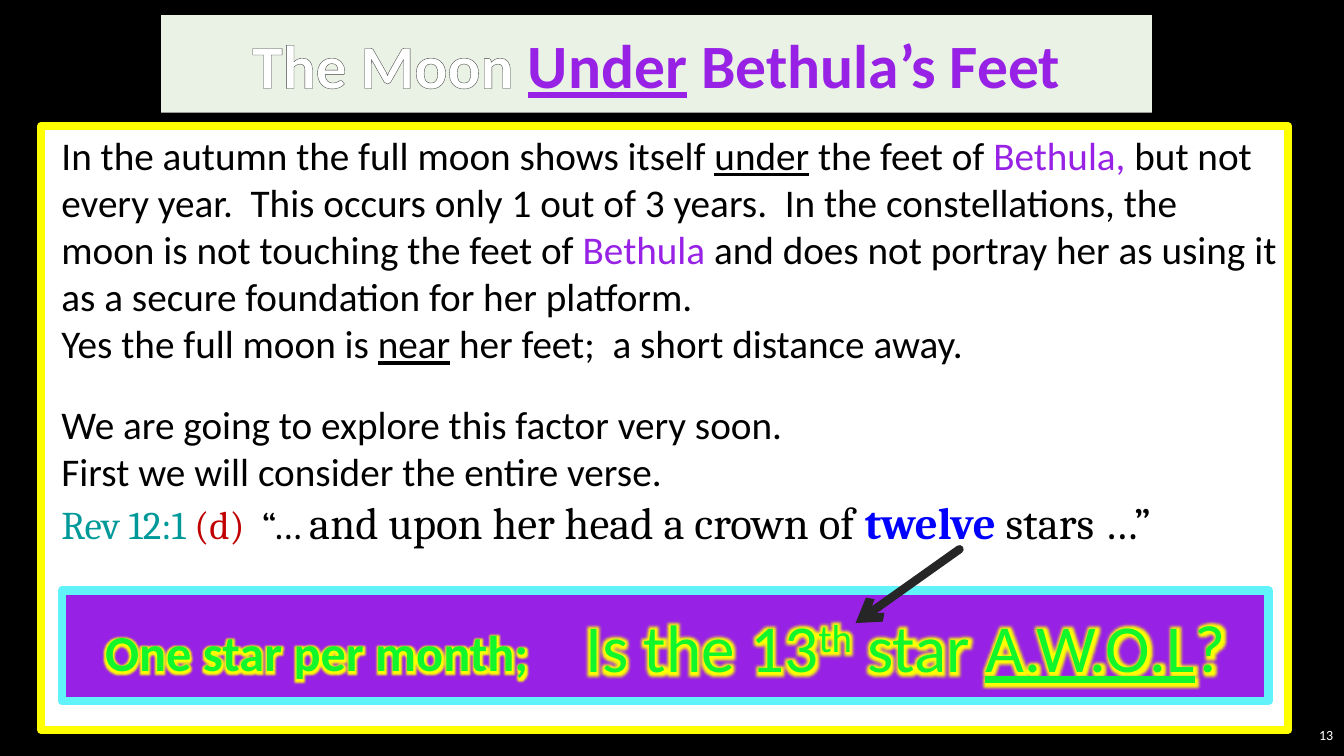
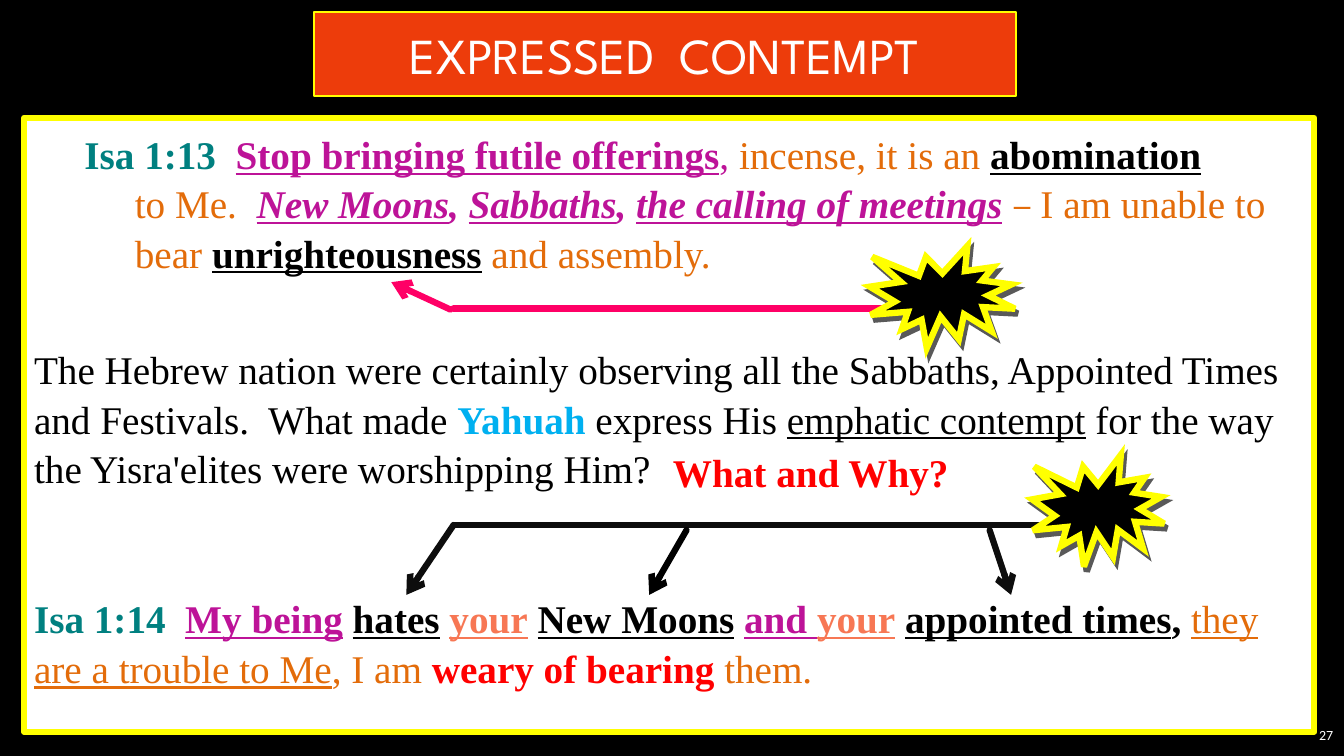
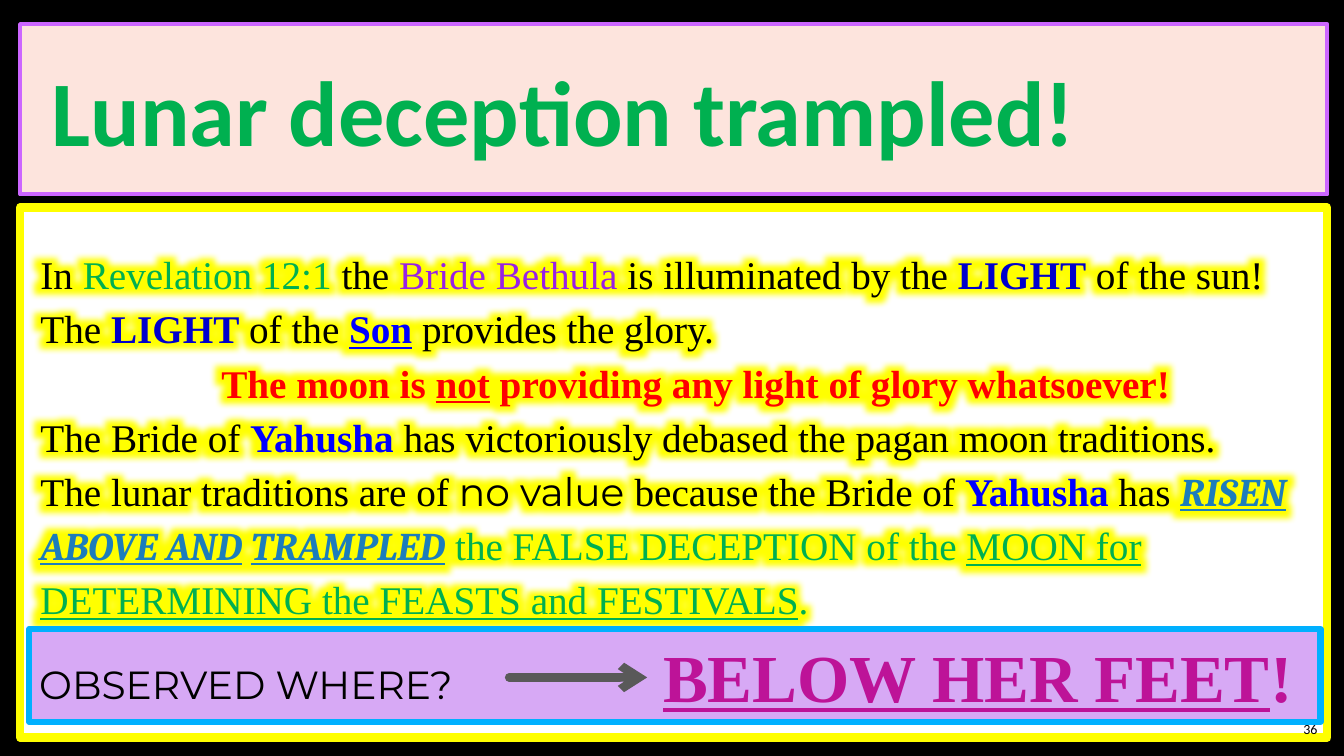
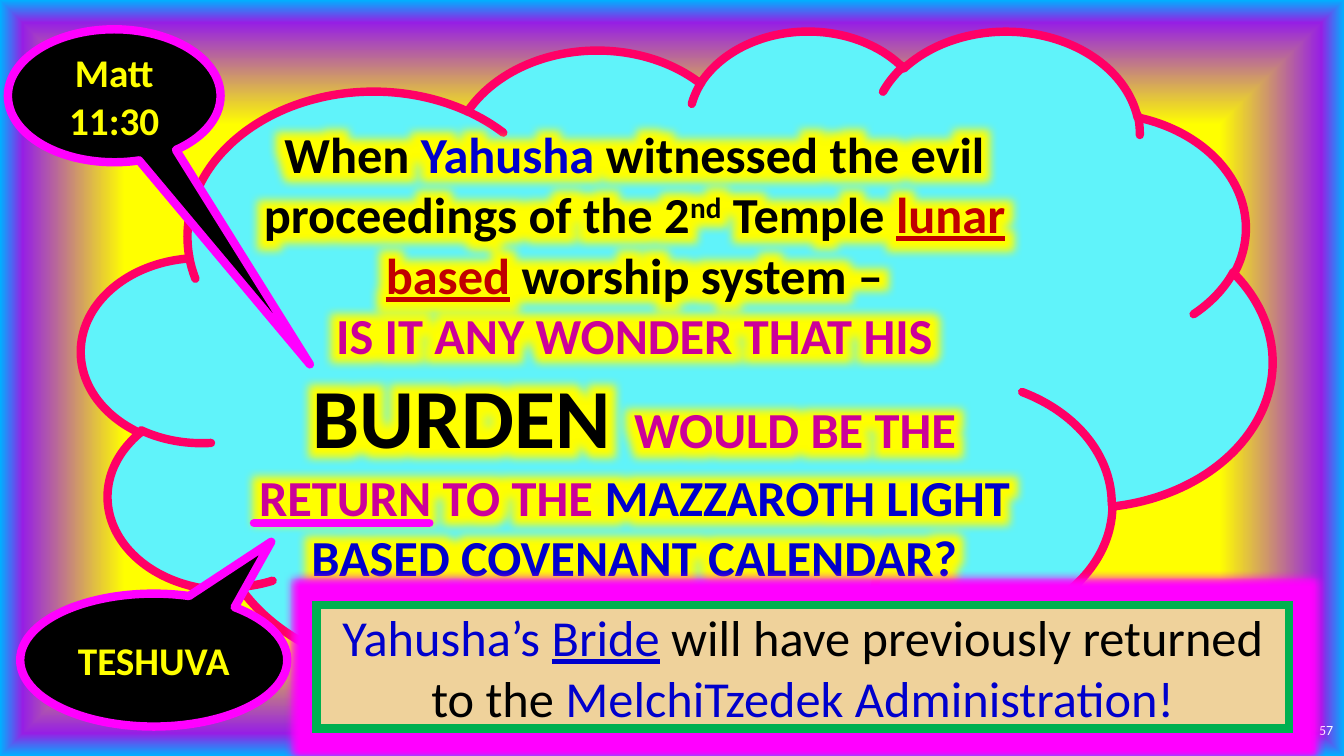
"""Build four slides on the moon under Bethula's feet."""
from dataclasses import dataclass, field
from typing import Any, Optional

from pptx import Presentation
from pptx.dml.color import RGBColor
from pptx.enum.shapes import MSO_CONNECTOR, MSO_SHAPE as Kind
from pptx.enum.text import MSO_ANCHOR as Anchor, PP_ALIGN as Align
from pptx.oxml import parse_xml
from pptx.oxml.ns import nsdecls, qn
from pptx.util import Cm, Pt

BLACK = RGBColor(0x00, 0x00, 0x00)
WHITE = RGBColor(0xFF, 0xFF, 0xFF)
YELLOW = RGBColor(0xFF, 0xFF, 0x00)
PURPLE = RGBColor(0x97, 0x22, 0xE5)
LILAC = RGBColor(0xD7, 0xA9, 0xF5)
VIOLET = RGBColor(0xCC, 0x66, 0xFF)
PALE_GREEN = RGBColor(0xE9, 0xF2, 0xE4)
GREEN = RGBColor(0x00, 0xB0, 0x50)
LIME = RGBColor(0x11, 0xF7, 0x2C)
CYAN = RGBColor(0x60, 0xF3, 0xFA)
SKY = RGBColor(0x00, 0xB0, 0xFF)
AZURE = RGBColor(0x00, 0xB0, 0xF0)
BLUE = RGBColor(0x00, 0x00, 0xFF)
NAVY = RGBColor(0x00, 0x00, 0xCC)
STEEL = RGBColor(0x1C, 0x7D, 0xBB)
TURQUOISE = RGBColor(0x00, 0x99, 0x99)
TEAL = RGBColor(0x00, 0x80, 0x80)
DARK_RED = RGBColor(0xC0, 0x00, 0x00)
RED = RGBColor(0xFF, 0x00, 0x00)
VERMILION = RGBColor(0xED, 0x3C, 0x0B)
ORANGE = RGBColor(0xE3, 0x6C, 0x0A)
CORAL = RGBColor(0xF7, 0x77, 0x54)
BLUSH = RGBColor(0xFD, 0xE4, 0xDD)
SAND = RGBColor(0xEF, 0xD2, 0x9B)
PLUM = RGBColor(0xBD, 0x13, 0x98)
CERISE = RGBColor(0xCC, 0x00, 0x99)
PINK = RGBColor(0xFF, 0x00, 0x66)
MAGENTA = RGBColor(0xFF, 0x00, 0xFF)
CHARCOAL = RGBColor(0x26, 0x26, 0x26)
INK = RGBColor(0x0D, 0x0D, 0x0D)
GREY = RGBColor(0x59, 0x59, 0x59)
OUTLINE = RGBColor(0x40, 0x40, 0x40)
EDGE_PURPLE = RGBColor(0x96, 0x1F, 0xE4)

SANS, SERIF, BOOK = "Calibri", "Times New Roman", "Cambria"
GEOMETRIC, POSTER = "Montserrat", "League Spartan"
NAMESPACE = nsdecls("a")


@dataclass
class Span:
    """A piece of text with the format that differs from its box."""
    text: str
    style: dict[str, Any]


@dataclass
class Para:
    """A paragraph with its spacing in points and indents in centimetres."""
    spans: list[Span]
    align: Any = Align.LEFT
    after: float = 0
    spacing: Optional[float] = None
    left: float = 0
    first: float = 0


@dataclass
class Box:
    """A shape with its place in centimetres, its look and its text."""
    left: float
    top: float
    width: float
    height: float
    paras: list[Para] = field(default_factory=list)
    style: dict[str, Any] = field(default_factory=dict)
    fill: Optional[RGBColor] = None
    line: Optional[RGBColor] = None
    weight: float = 6
    join: str = "round"
    kind: Any = Kind.RECTANGLE
    adjust: tuple[float, ...] = ()
    anchor: Any = Anchor.MIDDLE
    insets: tuple[float, float, float, float] = (0.25, 0.13, 0.25, 0.13)
    effect: str = ""


@dataclass
class Stroke:
    """A straight line, with an arrowhead if wanted."""
    start: tuple[float, float]
    end: tuple[float, float]
    color: RGBColor
    weight: float = 4.5
    arrow: bool = False


def t(text: str, **style: Any) -> Span:
    """Return a span."""
    return Span(text, style)


def solid_xml(color: RGBColor) -> str:
    """Return the XML of a solid fill."""
    return f'<a:solidFill><a:srgbClr val="{color}"/></a:solidFill>'


def glow_xml(color: RGBColor, radius: float) -> str:
    """Return the XML of a glow with a radius in points."""
    return f'<a:glow rad="{Pt(radius)}"><a:srgbClr val="{color}"/></a:glow>'


def shadow_xml(color: RGBColor, distance: float) -> str:
    """Return the XML of a hard shadow falling down and to the right."""
    return (f'<a:outerShdw dist="{Pt(distance)}" dir="3600000">'
            f'<a:srgbClr val="{color}"/></a:outerShdw>')


def effects(inner: str = "") -> Any:
    """Return an effect list element."""
    return parse_xml(f"<a:effectLst {NAMESPACE}>{inner}</a:effectLst>")


def add_span(para: Any, text: str, *, font: str = SANS, size: float = 28,
             color: RGBColor = BLACK, bold: bool = False, italic: bool = False,
             underline: bool = False, raised: bool = False,
             outline: Optional[RGBColor] = None, glow: float = 0) -> None:
    """Add formatted text to a paragraph, with line breaks at newlines."""
    for index, piece in enumerate(text.split("\n")):
        if index:
            para.add_line_break()
        if not piece:
            continue
        span = para.add_run()
        span.text = piece
        span.font.size = Pt(size)
        span.font.bold = bold
        span.font.italic = italic
        span.font.underline = underline
        span.font.color.rgb = color
        properties = span._r.get_or_add_rPr()
        if raised:
            properties.set("baseline", "30000")
        if outline is not None:
            properties.insert(0, parse_xml(
                f'<a:ln {NAMESPACE} w="3175">{solid_xml(outline)}</a:ln>'))
        if glow:
            properties.append(effects(glow_xml(YELLOW, glow)))
        span.font.name = font


def fill_para(para: Any, item: Para, style: dict[str, Any]) -> None:
    """Set the format of a paragraph and add its spans."""
    properties = para._p.get_or_add_pPr()
    properties.set("marL", str(Cm(item.left)))
    properties.set("indent", str(Cm(item.first)))
    para.alignment = item.align
    para.space_after = Pt(item.after)
    if item.spacing:
        para.line_spacing = item.spacing
    for span in item.spans:
        add_span(para, span.text, **{**style, **span.style})


def style_line(shape: Any, color: RGBColor, weight: float, join: str = "round") -> Any:
    """Set a line's colour, weight, cap and join, and return its element."""
    shape.line.color.rgb = color
    shape.line.width = Pt(weight)
    line = shape.element.find(".//" + qn("a:ln"))
    line.set("cap", "rnd" if join == "round" else "flat")
    limit = "" if join == "round" else ' lim="800000"'
    line.append(parse_xml(f"<a:{join} {NAMESPACE}{limit}/>"))
    return line


def draw_box(page: Any, box: Box) -> None:
    """Draw a box with its text."""
    place = (Cm(box.left), Cm(box.top), Cm(box.width), Cm(box.height))
    if box.fill is None:
        shape = page.shapes.add_textbox(*place)
    else:
        shape = page.shapes.add_shape(box.kind, *place)
        shape.shadow.inherit = False
        shape.fill.solid()
        shape.fill.fore_color.rgb = box.fill
        if box.line is None:
            shape.line.fill.background()
        else:
            style_line(shape, box.line, box.weight, box.join)
        if box.effect:
            current = shape.element.find(".//" + qn("a:effectLst"))
            current.getparent().replace(current, effects(box.effect))
        for index, value in enumerate(box.adjust):
            shape.adjustments[index] = value
    frame = shape.text_frame
    frame.word_wrap = True
    frame.vertical_anchor = box.anchor
    (frame.margin_left, frame.margin_top,
     frame.margin_right, frame.margin_bottom) = map(Cm, box.insets)
    for index, item in enumerate(box.paras):
        para = frame.add_paragraph() if index else frame.paragraphs[0]
        fill_para(para, item, box.style)


def draw_stroke(page: Any, stroke: Stroke) -> None:
    """Draw a straight line."""
    connector = page.shapes.add_connector(
        MSO_CONNECTOR.STRAIGHT, *map(Cm, stroke.start + stroke.end))
    line = style_line(connector, stroke.color, stroke.weight)
    if stroke.arrow:
        line.append(parse_xml(f'<a:tailEnd {NAMESPACE} type="arrow"/>'))
    connector.element.spPr.append(effects())


def draw(page: Any, items: list[Any]) -> None:
    """Draw boxes and lines from back to front."""
    for item in items:
        (draw_stroke if isinstance(item, Stroke) else draw_box)(page, item)


def number(text: str, left: float = 32.33, top: float = 18.01,
           color: RGBColor = WHITE) -> Box:
    """Return the page number."""
    return Box(left, top, 1.52, 1.04, [Para([t(text)], Align.RIGHT)],
               dict(size=10, color=color))


def seal(left: float, top: float, width: float, height: float) -> Box:
    """Return a black burst with a yellow edge."""
    return Box(left, top, width, height, fill=BLACK, line=YELLOW, weight=4.5,
               join="miter", kind=Kind.EXPLOSION1, effect=shadow_xml(GREY, 4))


def callout(text: str, left: float, top: float, width: float,
            adjust: tuple[float, float]) -> Box:
    """Return a black speech bubble."""
    return Box(left, top, width, 3.35, [Para([t(text)], Align.CENTER)],
               dict(color=YELLOW, bold=True), BLACK, MAGENTA,
               kind=Kind.OVAL_CALLOUT, adjust=adjust)


def add_page(deck: Any) -> Any:
    """Add a blank page with a black background."""
    page = deck.slides.add_slide(deck.slide_layouts[6])
    page.background.fill.solid()
    page.background.fill.fore_color.rgb = BLACK
    return page


def glow_background(page: Any) -> None:
    """Give the page a background that runs from yellow to a blue edge."""
    stops = "".join(
        f'<a:gs pos="{position}000"><a:srgbClr val="{color}"/></a:gs>'
        for position, color in ((67, YELLOW), (94, EDGE_PURPLE), (100, SKY)))
    old = page.element.find(".//" + qn("p:bgPr")).find(qn("a:solidFill"))
    old.getparent().replace(old, parse_xml(
        f'<a:gradFill {NAMESPACE} rotWithShape="1"><a:gsLst>{stops}</a:gsLst>'
        '<a:path path="shape"><a:fillToRect l="50000" t="50000" r="50000" b="50000"/>'
        "</a:path></a:gradFill>"))


def build_moon(page: Any) -> None:
    """Draw the page on the moon under Bethula's feet."""
    under = dict(underline=True)
    star = dict(size=48, color=LIME, glow=8)
    draw(page, [
        Box(4.06, 0.38, 24.97, 2.46, [Para([
            t("The Moon ", color=WHITE, outline=OUTLINE), t("Under", **under),
            t(" Bethula’s Feet")], Align.CENTER)],
            dict(size=44, color=PURPLE, bold=True), PALE_GREEN),
        Box(1.04, 3.18, 31.42, 15.21, [
            Para([t("In the autumn the full moon shows itself "), t("under", **under),
                  t(" the feet of "), t("Bethula,", color=PURPLE),
                  t(" but not every year.  This occurs only 1 out of 3 years.  In the "
                    "constellations, the moon is not touching the feet of "),
                  t("Bethula", color=PURPLE),
                  t(" and does not portray her as using it as a secure foundation for "
                    "her platform.\nYes the full moon is "),
                  t("near", **under), t(" her feet;  a short distance away.")], after=24),
            Para([t("We are going to explore this factor very soon.\n"
                    "First we will consider the entire verse.\n"),
                  t("Rev 12:1 ", font=BOOK, color=TURQUOISE),
                  t("(d)  ", font=BOOK, color=DARK_RED), t("“… ", font=BOOK),
                  t("and upon her head a crown of ", font=BOOK, size=32),
                  t("twelve ", font=BOOK, size=32, color=BLUE, bold=True),
                  t("stars …”", font=BOOK, size=32)])],
            fill=WHITE, line=YELLOW, anchor=Anchor.TOP, insets=(0.51, 0.13, 0.25, 0.13)),
        Box(1.57, 14.88, 30.4, 2.79, [Para([
            t("Is the 13"), t("th", raised=True), t(" star "), t("A.W.O.L", **under),
            t("?")])], star, PURPLE, CYAN, insets=(13.19, 0.13, 0.25, 0.13)),
        Box(2.4, 15.03, 12, 2.79, [Para([t("One star per month;")])],
            dict(star, size=36, bold=True)),
        Stroke((24.18, 13.84), (21.56, 15.7), CHARCOAL, 6, True),
        number("13"),
    ])


def build_contempt(page: Any) -> None:
    """Draw the page on expressed contempt."""
    verse = dict(color=TEAL, bold=True)
    stress = dict(color=PLUM, bold=True, underline=True)
    feast = dict(stress, italic=True)
    comma = dict(feast, underline=False)
    strong = dict(bold=True, underline=True)
    yours = dict(strong, color=CORAL)
    orange = dict(color=ORANGE)
    draw(page, [
        Box(7.92, 0.3, 17.68, 2.13, [Para([t("EXPRESSED  CONTEMPT")], Align.CENTER)],
            dict(size=36, font=POSTER, color=WHITE), VERMILION, YELLOW, 1.5),
        Box(0.61, 2.97, 32.51, 15.47, [
            Para([t("Isa 1:13  ", **verse), t("Stop bringing futile offerings", **stress),
                  t(", ", color=PLUM), t("incense, it is an ", **orange),
                  t("abomination", **strong), t("\nto Me.  ", **orange),
                  t("New Moons", **feast), t(", ", **comma), t("Sabbaths", **feast),
                  t(", ", **comma), t("the calling of meetings", **feast), t(" "),
                  t("– ", font=BOOK, **orange), t("I am unable to bear ", **orange),
                  t("unrighteousness", **strong), t(" and assembly.", **orange)],
                 after=48, spacing=1.05, left=2.54, first=-1.27),
            Para([t("The Hebrew nation were certainly observing all the Sabbaths, "
                    "Appointed Times and Festivals.  What made "),
                  t("Yahuah ", color=AZURE, bold=True), t("express His "),
                  t("emphatic contempt", underline=True),
                  t(" for the way\nthe Yisra'elites were worshipping Him?")],
                 after=72, spacing=1.05),
            Para([t("Isa 1:14  ", **verse), t("My being", **stress), t(" "),
                  t("hates", **strong), t(" "), t("your", **yours), t(" "),
                  t("New Moons", **strong), t(" "), t("and ", **stress),
                  t("your", **yours), t(" "), t("appointed times", **strong),
                  t(", ", bold=True),
                  t("they are a trouble to Me", underline=True, **orange),
                  t(", I am ", **orange), t("weary of bearing ", color=RED, bold=True),
                  t("them.", **orange)], spacing=1.05)],
            dict(font=SERIF), WHITE, YELLOW, 4.5, anchor=Anchor.TOP,
            insets=(0.25, 0.25, 0.25, 0.13)),
        Stroke((11.43, 7.77), (22.45, 7.77), PINK),
        seal(21.92, 6.2, 3.66, 2.57),
        Stroke((11.35, 7.8), (9.86, 7.11), PINK, arrow=True),
        Stroke((24.94, 13.36), (25.48, 14.99), INK, arrow=True),
        Stroke((11.43, 13.23), (10.24, 14.99), INK, arrow=True),
        Stroke((11.43, 13.23), (26.62, 13.23), INK),
        seal(26.01, 11.46, 3.33, 2.82),
        Stroke((17.3, 13.36), (16.36, 14.99), BLACK, arrow=True),
        number("27"),
        Box(16.71, 11.2, 7.67, 1.3, [Para([t("What and Why?")], spacing=1.05)],
            dict(font=SERIF, color=RED, bold=True)),
    ])


def build_trampled(page: Any) -> None:
    """Draw the page on the trampled lunar deception."""
    light = dict(color=NAVY, bold=True)
    name = dict(color=BLUE, bold=True)
    alarm = dict(color=RED, bold=True)
    risen = dict(font=BOOK, color=STEEL, bold=True, italic=True)
    green = dict(color=GREEN)
    draw(page, [
        Box(0.51, 0.61, 32.94, 4.29, [Para([t("Lunar deception trampled!")])],
            dict(size=66, color=GREEN, bold=True), BLUSH, VIOLET, 3,
            insets=(0.79, 0.25, 0.25, 0.25)),
        Box(0.51, 5.23, 32.94, 13.36, [
            Para([t("In "), t("Revelation 12:1 ", **green), t("the "),
                  t("Bride Bethula ", color=PURPLE), t("is illuminated by the "),
                  t("LIGHT", **light), t(" of the sun!  The "), t("LIGHT", **light),
                  t(" of the "), t("Son", underline=True, **name),
                  t(" provides the glory.")], spacing=1.15),
            Para([t("The moon is ", **alarm), t("not", underline=True, **alarm),
                  t(" providing any light of glory whatsoever!", **alarm)],
                 spacing=1.15, left=4.56),
            Para([t("The Bride of "), t("Yahusha", **name),
                  t(" has victoriously debased the pagan moon traditions.\n"
                    "The lunar traditions are of "),
                  t("no value ", font=GEOMETRIC), t("because the Bride of "),
                  t("Yahusha ", **name), t("has "),
                  t("RISEN ABOVE AND", underline=True, **risen), t(" ", **risen),
                  t("TRAMPLED", underline=True, **risen),
                  t(" the FALSE DECEPTION of the ", **green),
                  t("MOON for DETERMINING the FEASTS and FESTIVALS",
                    underline=True, **green), t(".", **green)], spacing=1.15)],
            dict(font=SERIF, glow=24), WHITE, YELLOW, anchor=Anchor.TOP,
            insets=(0.51, 0.91, 0.25, 0.13)),
        number("36", 31.93, 17.86, BLACK),
        Box(0.74, 15.85, 32.54, 2.34, [Para([
            t("BELOW HER FEET", underline=True), t("!")])],
            dict(font=SERIF, size=48, color=PLUM, bold=True), LILAC, SKY, 4.5,
            insets=(15.97, 0.13, 0.25, 0.13)),
        Box(0.74, 16.07, 11.8, 2.34, [Para([t("OBSERVED WHERE?")])],
            dict(font=GEOMETRIC)),
        Stroke((12.83, 17.07), (16.31, 17.07), GREY, 6, True),
    ])


def build_burden(page: Any) -> None:
    """Draw the page on the burden and the return."""
    navy = dict(color=NAVY)
    cerise = dict(color=CERISE)
    glow_background(page)
    draw(page, [
        number("57", top=17.88),
        Box(2.06, 0.74, 30, 17.2, [
            Para([t("When "), t("Yahusha ", **navy),
                  t("witnessed the evil proceedings of the 2"), t("nd", raised=True),
                  t(" Temple "), t("lunar based", color=DARK_RED, underline=True),
                  t(" worship system –")], Align.CENTER),
            Para([t("IS IT ANY WONDER THAT HIS ", **cerise), t("BURDEN", size=60),
                  t("  WOULD BE THE RETURN TO THE ", **cerise),
                  t("MAZZAROTH LIGHT BASED COVENANT CALENDAR?", **navy)], Align.CENTER)],
            dict(size=36, bold=True, glow=24), CYAN, PINK, kind=Kind.CLOUD),
        callout("Matt 11:30", 0.2, 0.74, 5.36, (0.92, 2.02)),
        callout("TESHUVA", 0.51, 14.96, 6.73, (0.44, -0.89)),
        Stroke((6.4, 13.18), (10.82, 13.18), MAGENTA, 6),
        Box(7.98, 15.24, 24.51, 3.12, [Para([
            t("Yahusha’s ", **navy), t("Bride", underline=True, **navy),
            t(" will have previously returned to the "),
            t("MelchiTzedek Administration!", **navy)], Align.CENTER)],
            dict(size=36), SAND, GREEN, join="miter", effect=glow_xml(MAGENTA, 11)),
    ])


def main() -> None:
    """Build and save the deck."""
    deck = Presentation()
    deck.slide_width, deck.slide_height = Cm(33.87), Cm(19.05)
    for build in (build_moon, build_contempt, build_trampled, build_burden):
        build(add_page(deck))
    deck.save("out.pptx")


if __name__ == "__main__":
    main()
